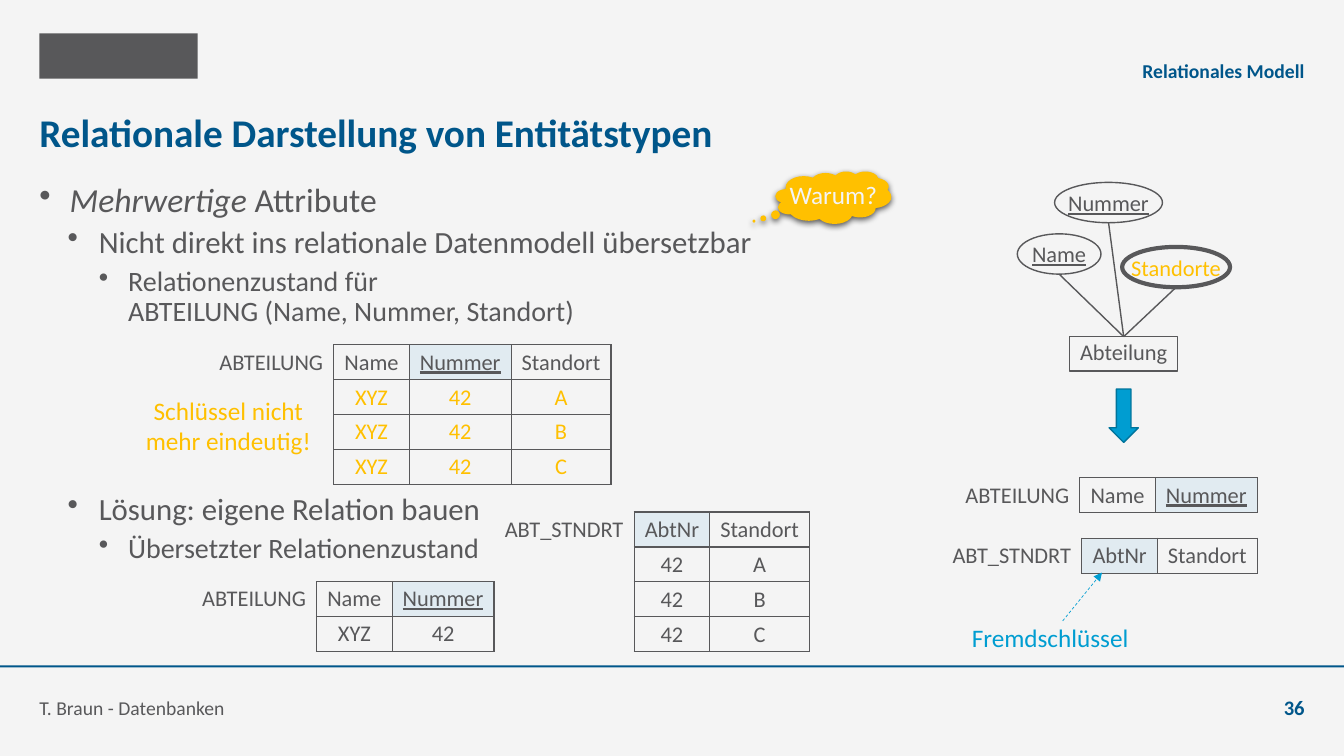
"""Build the slide on the relational mapping of multi-valued attributes."""
from dataclasses import dataclass

from lxml import etree
from pptx import Presentation
from pptx.dml.color import RGBColor
from pptx.enum.dml import MSO_LINE
from pptx.enum.shapes import MSO_CONNECTOR, MSO_SHAPE
from pptx.enum.text import MSO_ANCHOR, PP_ALIGN
from pptx.oxml.ns import qn
from pptx.util import Inches, Pt

LEFT, CENTER, RIGHT = PP_ALIGN.LEFT, PP_ALIGN.CENTER, PP_ALIGN.RIGHT
TOP, MIDDLE, BOTTOM = MSO_ANCHOR.TOP, MSO_ANCHOR.MIDDLE, MSO_ANCHOR.BOTTOM
RECTANGLE, ELLIPSE = MSO_SHAPE.RECTANGLE, MSO_SHAPE.OVAL
DOWN_ARROW, CLOUD = MSO_SHAPE.DOWN_ARROW, MSO_SHAPE.CLOUD_CALLOUT
STRAIGHT, DASH = MSO_CONNECTOR.STRAIGHT, MSO_LINE.DASH


@dataclass(frozen=True)
class Theme:
    font: str = "Calibri"
    background: RGBColor = RGBColor.from_string("F4F4F4")
    gray: RGBColor = RGBColor.from_string("58585A")
    navy: RGBColor = RGBColor.from_string("00568A")
    cyan: RGBColor = RGBColor.from_string("009DD1")
    cyan_edge: RGBColor = RGBColor.from_string("00749B")
    yellow: RGBColor = RGBColor.from_string("FFC000")
    key_fill: RGBColor = RGBColor.from_string("E1EBF1")
    title: float = 28
    levels: tuple = (24, 22, 20)
    note: float = 18
    label: float = 16
    footer: float = 14
    number: float = 14.7


theme = Theme()
presentation = Presentation()
presentation.slide_width = Inches(13.33)
presentation.slide_height = Inches(7.5)
slide = presentation.slides.add_slide(presentation.slide_layouts[6])
slide.background.fill.solid()
slide.background.fill.fore_color.rgb = theme.background


def write(paragraph, text, size=theme.label, color=theme.gray, align=LEFT,
          bold=False, italic=False, underline=False):
    paragraph.alignment = align
    for index, line in enumerate(text.split("\n")):
        if index:
            paragraph.add_line_break()
        run = paragraph.add_run()
        run.text = line
        run.font.name = theme.font
        run.font.size = Pt(size)
        run.font.color.rgb = color
        run.font.bold = bold
        run.font.italic = italic
        run.font.underline = underline


def add_box(kind, left, top, width, height, fill=None, line=None, weight=1,
            anchor=TOP, wrap=True, inset=True):
    place = [Inches(value) for value in (left, top, width, height)]
    if kind is None:
        shape = slide.shapes.add_textbox(*place)
    else:
        shape = slide.shapes.add_shape(kind, *place)
        shape.shadow.inherit = False
        shape.fill.solid()
        shape.fill.fore_color.rgb = fill
        if line is None:
            shape.line.fill.background()
        else:
            shape.line.color.rgb = line
            shape.line.width = Pt(weight)
    frame = shape.text_frame
    frame.word_wrap = wrap
    frame.vertical_anchor = anchor
    if not inset:
        frame.margin_left = frame.margin_right = 0
        frame.margin_top = frame.margin_bottom = 0
    return shape


add_box(RECTANGLE, 0.39, 0.33, 1.57, 0.45, fill=theme.gray)
add_box(RECTANGLE, 0, 6.6, 13.33, 0.02, fill=theme.navy)

framing_texts = [
    ("Relationale Darstellung von Entitätstypen", (0.39, 0.99, 12.55, 0.63),
     MIDDLE, dict(size=theme.title, color=theme.navy, bold=True)),
    ("Relationales Modell", (3.93, 0.43, 9.01, 0.39),
     BOTTOM, dict(size=theme.footer, color=theme.navy, bold=True, align=RIGHT)),
    ("T. Braun - Datenbanken", (0.39, 6.75, 9.2, 0.39),
     BOTTOM, dict(size=theme.footer)),
    ("36", (12.15, 6.75, 0.79, 0.39),
     BOTTOM, dict(size=theme.number, color=theme.navy, bold=True, align=RIGHT)),
]
for text, place, anchor, style in framing_texts:
    box = add_box(None, *place, anchor=anchor, inset=False)
    write(box.text_frame.paragraphs[0], text, **style)

indents = [(0.3, -0.3), (0.59, -0.31), (0.88, -0.29)]
bullet_blocks = [
    (1.82, 1.5, [
        (0, "Mehrwertige ", "Attribute"),
        (1, "", "Nicht direkt ins relationale Datenmodell übersetzbar"),
        (2, "", "Relationenzustand für \nABTEILUNG (Name, Nummer, Standort)"),
    ]),
    (4.9, 0.8, [
        (1, "", "Lösung: eigene Relation bauen"),
        (2, "", "Übersetzter Relationenzustand"),
    ]),
]
for top, height, bullets in bullet_blocks:
    frame = add_box(None, 0.39, top, 12.55, height, inset=False).text_frame
    for index, (level, emphasis, text) in enumerate(bullets):
        paragraph = frame.add_paragraph() if index else frame.paragraphs[0]
        paragraph.level = level
        paragraph.line_spacing = 0.9
        paragraph.space_before = Pt(5 if index else 0)
        margin, hanging = indents[level]
        properties = paragraph._p.get_or_add_pPr()
        properties.set("marL", str(Inches(margin)))
        properties.set("indent", str(Inches(hanging)))
        etree.SubElement(properties, qn("a:buChar"), char="•")
        if emphasis:
            write(paragraph, emphasis, size=theme.levels[level], italic=True)
        write(paragraph, text, size=theme.levels[level])

row_height = 0.345
key_columns = {"AbtNr", "Nummer"}
relations = [
    (9.34, 5.34, (1.39, 0.75, 0.99), theme.gray,
     [("ABT_STNDRT", "AbtNr", "Standort")]),
    (9.47, 4.74, (1.24, 0.75, 1.01), theme.gray,
     [("ABTEILUNG", "Name", "Nummer")]),
    (2.07, 3.42, (1.24, 0.75, 1.01, 0.99), theme.yellow,
     [("ABTEILUNG", "Name", "Nummer", "Standort")]
     + [("", "XYZ", "42", place) for place in "ABC"]),
    (4.9, 5.08, (1.39, 0.75, 0.99), theme.gray,
     [("ABT_STNDRT", "AbtNr", "Standort")]
     + [("", "42", place) for place in "ABC"]),
    (1.9, 5.77, (1.24, 0.75, 1.01), theme.gray,
     [("ABTEILUNG", "Name", "Nummer"), ("", "XYZ", "42")]),
]
for left, top, widths, data_color, rows in relations:
    table = slide.shapes.add_table(
        len(rows), len(widths), Inches(left), Inches(top),
        Inches(sum(widths)), Inches(row_height * len(rows))).table
    table.first_row = table.horz_banding = False
    for column, width in zip(table.columns, widths):
        column.width = Inches(width)
    for row_index, row in enumerate(rows):
        for column_index, text in enumerate(row):
            cell = table.cell(row_index, column_index)
            cell.margin_left = cell.margin_right = Inches(0.08)
            cell.margin_top = cell.margin_bottom = Inches(0.04)
            paragraph = cell.text_frame.paragraphs[0]
            if text:
                write(paragraph, text, align=CENTER, underline=text == "Nummer",
                      color=data_color if row_index else theme.gray)
            else:
                etree.SubElement(paragraph._p, qn("a:endParaRPr"),
                                 sz=str(theme.label * 100))
            if text in key_columns:
                cell.fill.solid()
                cell.fill.fore_color.rgb = theme.key_fill
            else:
                cell.fill.background()
            properties = cell._tc.get_or_add_tcPr()
            for position, side in enumerate("LRTB"):
                border = etree.Element(qn(f"a:ln{side}"), w=str(Pt(1)))
                if column_index or side == "R":
                    solid = etree.SubElement(border, qn("a:solidFill"))
                    etree.SubElement(solid, qn("a:srgbClr"), val=str(theme.gray))
                else:
                    etree.SubElement(border, qn("a:noFill"))
                properties.insert(position, border)

entity = add_box(RECTANGLE, 10.61, 3.34, 1.07, 0.34, fill=theme.background,
                 line=theme.gray, wrap=False)
entity.text_frame.paragraphs[0].line_spacing = 0.9
write(entity.text_frame.paragraphs[0], "Abteilung", align=CENTER)

attributes = [
    ("Name", 10.09, 2.32, 0.83, 1, dict(underline=True)),
    ("Nummer", 10.46, 1.81, 1.07, 1, dict(underline=True)),
    ("Standorte", 11.13, 2.45, 1.07, 3, dict(color=theme.yellow)),
]
connectors = []
for text, left, top, width, weight, style in attributes:
    ellipse = add_box(ELLIPSE, left, top, width, 0.4, fill=theme.background,
                      line=theme.gray, weight=weight, anchor=MIDDLE, wrap=False)
    write(ellipse.text_frame.paragraphs[0], text, align=CENTER, **style)
    connector = slide.shapes.add_connector(
        STRAIGHT, Inches(11.15), Inches(3.34),
        Inches(left + width / 2), Inches(top + 0.4))
    connector.begin_connect(entity, 0)
    connector.line.color.rgb = theme.gray
    connector.line.width = Pt(1)
    connectors.append(connector)

add_box(DOWN_ARROW, 11, 3.86, 0.29, 0.53, fill=theme.cyan, line=theme.cyan_edge)

key_arrow = slide.shapes.add_connector(
    STRAIGHT, Inches(10.54), Inches(6.16), Inches(10.93), Inches(5.68))
key_arrow.line.color.rgb = theme.cyan
key_arrow.line.width = Pt(0.5)
key_arrow.line.dash_style = DASH
etree.SubElement(key_arrow.line._get_or_add_ln(), qn("a:tailEnd"), type="triangle")
for connector in connectors + [key_arrow]:
    etree.SubElement(connector._element.spPr, qn("a:effectLst"))

cloud = add_box(CLOUD, 7.69, 1.7, 1.15, 0.52, fill=theme.yellow)
cloud.adjustments[0], cloud.adjustments[1] = -0.685, 0.45
shadow = etree.SubElement(
    cloud._element.spPr.find(qn("a:effectLst")), qn("a:outerShdw"),
    blurRad=str(Pt(4.5)), dist=str(Pt(1.5)), dir="5400000", rotWithShape="0")
shadow_color = etree.SubElement(shadow, qn("a:srgbClr"), val="000000")
etree.SubElement(shadow_color, qn("a:alpha"), val="63000")

notes = [
    ("Warum?", (7.69, 1.73, 1.15, 0.4), theme.background, CENTER, True),
    ("Schlüssel nicht mehr eindeutig!", (1.32, 3.87, 1.89, 0.71),
     theme.yellow, CENTER, True),
    ("Fremdschlüssel", (9.54, 6.12, 1.77, 0.4), theme.cyan, LEFT, False),
]
for text, place, color, align, wrap in notes:
    box = add_box(None, *place, wrap=wrap)
    write(box.text_frame.paragraphs[0], text, size=theme.note, color=color, align=align)

presentation.save("out.pptx")
